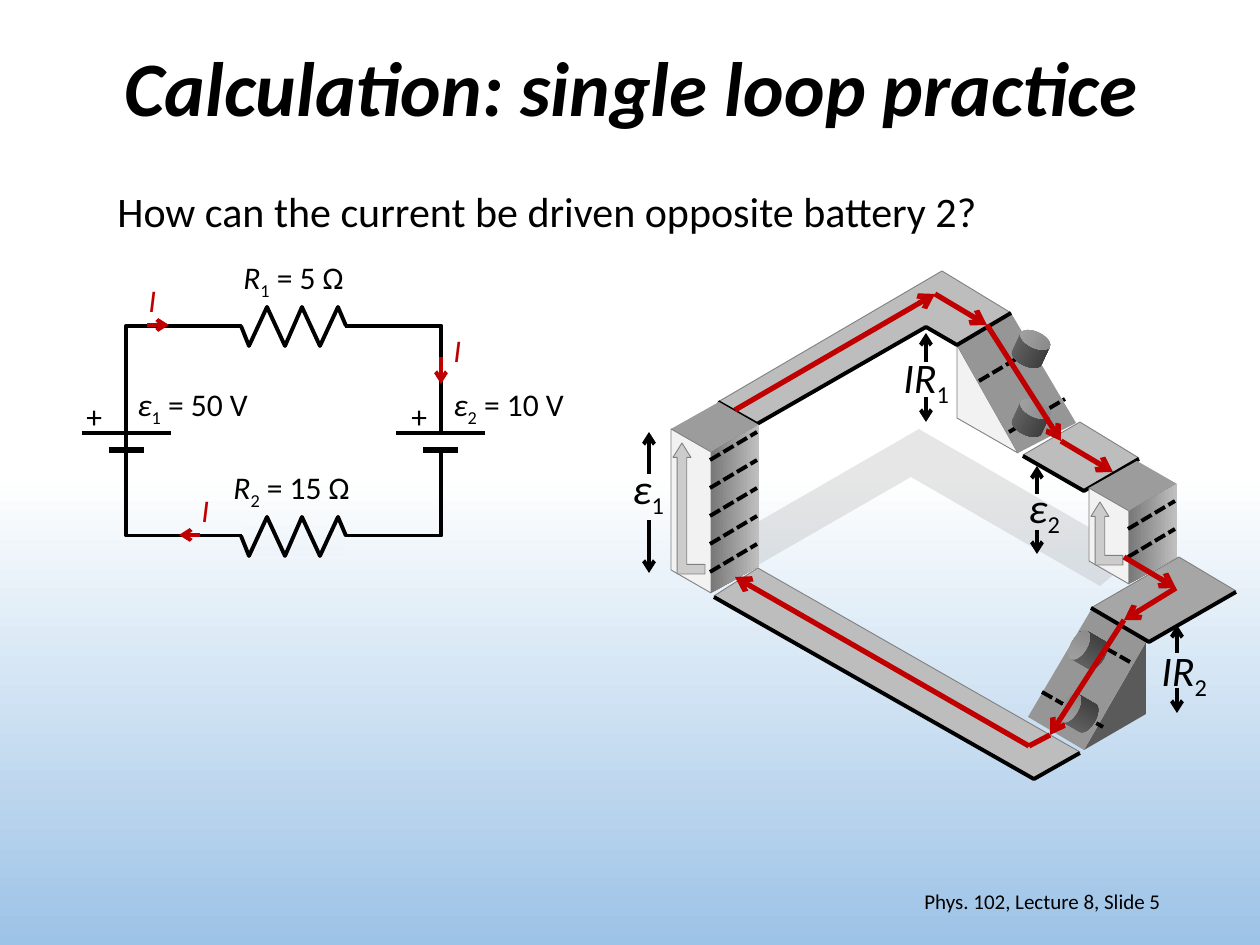
from dataclasses import dataclass

import lxml.etree
import pptx
import pptx.dml.color
import pptx.enum.dml
import pptx.enum.shapes
import pptx.enum.text
import pptx.oxml.ns
import pptx.util

EMU_PER_PX = 914400 / 126
COLORS = {
    "ink": "000000", "current": "C00000", "white": "FFFFFF", "sky": "9DC3E6",
    "haze": "F6FAFD", "haze_low": "EEF4FA", "road": "BDBDBD", "landing": "A6A6A6",
    "ramp": "969696", "lid": "9C9C9C", "wall": "F2F2F2", "shade": "5A5A5A",
    "side": "787878", "side_light": "C0C0C0", "edge": "808080", "lift": "CCCCCC",
    "peg": "707070", "peg_dark": "303030",
}
ALIGN = pptx.enum.text.PP_ALIGN
ANCHOR = pptx.enum.text.MSO_ANCHOR
PRESET = pptx.enum.shapes.MSO_SHAPE
Point = tuple[int, int]
Box = tuple[int, int, int, int]


@dataclass
class Label:
    left: int
    top: int
    width: int
    height: int
    text: str
    size: int = 18
    subscript: str = ""
    tail: str = ""
    color: str = "ink"
    italic: bool = False
    bold: bool = False
    align: ALIGN = ALIGN.LEFT
    wrap: bool = False
    spacing: float = 1.0


@dataclass
class Stroke:
    start: Point
    end: Point
    color: str = "ink"
    weight: float = 2.25
    arrow: bool = False
    dashed: bool = False


@dataclass
class Slab:
    corners: list[Point]
    fill: str
    fill_end: str = ""
    outline: str = ""


@dataclass
class Battery:
    left: int
    top: int
    height: int
    first_dash: int
    dashes: int


@dataclass
class Peg:
    left: int
    top: int
    angle: int


def px(length: float) -> pptx.util.Emu:
    return pptx.util.Emu(round(length * EMU_PER_PX))


def rgb(name: str) -> pptx.dml.color.RGBColor:
    return pptx.dml.color.RGBColor.from_string(COLORS[name])


def paint(fill, first: str, last: str = "", angle: int = 0, first_stop: float = 0) -> None:
    if not last:
        fill.solid()
        fill.fore_color.rgb = rgb(first)
        return
    fill.gradient()
    fill.gradient_angle = angle
    for stop, name, position in zip(fill.gradient_stops, (first, last), (first_stop, 1)):
        stop.color.rgb = rgb(name)
        stop.position = position


def edge(line, color: str = "", weight: float = 0.5) -> None:
    if color:
        line.color.rgb = rgb(color)
        line.width = pptx.util.Pt(weight)
    else:
        line.fill.background()


def draw_label(shapes, label: Label) -> None:
    box = shapes.add_textbox(*map(px, (label.left, label.top, label.width, label.height)))
    frame = box.text_frame
    frame.word_wrap = label.wrap
    frame.vertical_anchor = ANCHOR.MIDDLE if label.wrap else ANCHOR.TOP
    paragraph = frame.paragraphs[0]
    paragraph.alignment = label.align
    paragraph.line_spacing = label.spacing
    paragraph.font.name = "Calibri"
    paragraph.font.size = pptx.util.Pt(label.size)
    paragraph.font.color.rgb = rgb(label.color)
    paragraph.font.bold = label.bold
    for position, text in enumerate((label.text, label.subscript, label.tail)):
        if text:
            run = paragraph.add_run()
            run.text = text
            run.font.italic = label.italic and position == 0
            if position == 1:
                run._r.get_or_add_rPr().set("baseline", "-25000")


def draw_stroke(shapes, stroke: Stroke) -> None:
    line = shapes.add_connector(
        pptx.enum.shapes.MSO_CONNECTOR.STRAIGHT, *map(px, stroke.start + stroke.end))
    edge(line.line, stroke.color, stroke.weight)
    if stroke.dashed:
        line.line.dash_style = pptx.enum.dml.MSO_LINE.SQUARE_DOT
    if stroke.arrow:
        lxml.etree.SubElement(
            line.line._get_or_add_ln(), pptx.oxml.ns.qn("a:tailEnd"), type="arrow")
    lxml.etree.SubElement(line._element.spPr, pptx.oxml.ns.qn("a:effectLst"))


def add_preset(shapes, kind, box: Box):
    shape = shapes.add_shape(kind, *map(px, box))
    shape.shadow.inherit = False
    edge(shape.line)
    return shape


def outline(shapes, points: list[Point], close: bool):
    builder = shapes.build_freeform(*points[0], scale=EMU_PER_PX)
    builder.add_line_segments(points[1:], close=close)
    shape = builder.convert_to_shape()
    shape.shadow.inherit = False
    return shape


def draw_trace(shapes, points: list[Point]) -> None:
    trace = outline(shapes, points, False)
    trace.fill.background()
    edge(trace.line, "ink", 2.25)


def draw_slab(shapes, slab: Slab):
    shape = outline(shapes, slab.corners, True)
    paint(shape.fill, slab.fill, slab.fill_end)
    edge(shape.line, slab.outline)
    return shape


def draw_battery(shapes, battery: Battery) -> None:
    x, y, h = battery.left, battery.top, battery.height
    front, right, back = (x + 40, y + 23), (x + 88, y - 4), (x + 48, y - 27)
    for slab in (
        Slab([(x, y), back, right, front], "lid"),
        Slab([(x, y), front, (x + 40, y + 23 + h), (x, y + h)], "wall", outline="edge"),
        Slab([front, right, (x + 88, y - 4 + h), (x + 40, y + 23 + h)], "side", "side_light"),
    ):
        draw_slab(shapes, slab)
    lift = add_preset(shapes, PRESET.BENT_UP_ARROW, (x + 2, y + 14, 32, h - 10))
    lift._element.spPr.find(pptx.oxml.ns.qn("a:xfrm")).set("flipH", "1")
    for index, share in enumerate((0.3, 0.28, 0.45)):
        lift.adjustments[index] = share
    paint(lift.fill, "lift")
    edge(lift.line, "edge")
    for row in range(battery.dashes):
        level = battery.first_dash + 28 * row
        draw_stroke(shapes, Stroke((x + 39, level), (x + 86, level - 28), dashed=True))


def draw_peg(shapes, peg: Peg) -> None:
    can = add_preset(shapes, PRESET.CAN, (peg.left, peg.top, 32, 36))
    can.adjustments[0] = 0.5
    can.rotation = peg.angle
    paint(can.fill, "peg", "peg_dark")


def draw_circuit(shapes) -> None:
    loop = add_preset(shapes, PRESET.RECTANGLE, (179, 273, 210, 315))
    loop.rotation = 270
    loop.fill.background()
    edge(loop.line, "ink", 2.25)
    for box, colors in (((388, 432, 105, 20), ("white",)), ((242, 305, 103, 42), ("white",)),
                        ((242, 514, 103, 42), ("haze", "haze_low", 270))):
        gap = add_preset(shapes, PRESET.RECTANGLE, box)
        paint(gap.fill, *colors)
    for level in (326, 536):
        peaks = [(249 + round(17.8 * i), level + (20 if i % 2 == 0 else -19)) for i in range(6)]
        draw_trace(shapes, [(241, level), *peaks, (346, level)])
    for left in (82, 396):
        draw_stroke(shapes, Stroke((left, 433), (left + 89, 433)))
        draw_stroke(shapes, Stroke((left + 27, 450), (left + 62, 450), weight=3))
    for start, end in (((147, 325), (169, 325)), ((441, 357), (441, 384)), ((200, 535), (179, 535))):
        draw_stroke(shapes, Stroke(start, end, "current", arrow=True))


def draw_landscape(shapes) -> None:
    shadow = draw_slab(shapes, Slab(
        [(758, 522), (919, 429), (1137, 555), (1100, 586), (911, 477), (758, 565)], "landing"))
    color = shadow._element.spPr.find(".//" + pptx.oxml.ns.qn("a:srgbClr"))
    lxml.etree.SubElement(color, pptx.oxml.ns.qn("a:alpha"), val="28000")
    for slab in (
        Slab([(957, 345), (957, 418), (1018, 453)], "wall", outline="edge"),
        Slab([(957, 345), (1011, 313), (1076, 423), (1018, 453)], "ramp"),
        Slab([(1146, 642), (1146, 714), (1084, 750)], "shade"),
        Slab([(1091, 610), (1146, 642), (1084, 750), (1028, 717)], "ramp"),
        Slab([(718, 402), (942, 271), (1011, 313), (957, 345), (926, 327), (757, 424)], "road", outline="edge"),
        Slab([(1023, 455), (1080, 422), (1139, 458), (1084, 490)], "road", outline="edge"),
        Slab([(714, 596), (758, 568), (1080, 752), (1034, 779)], "road", outline="edge"),
    ):
        draw_slab(shapes, slab)
    for rim in (
        [(718, 402), (757, 424), (926, 327), (957, 345), (1011, 313)],
        [(1023, 456), (1084, 491), (1139, 459)],
        [(714, 597), (1034, 779), (1080, 753)],
    ):
        draw_trace(shapes, rim)
    for start, end in (((979, 381), (1033, 349)), ((1009, 432), (1065, 399)),
                       ((1042, 692), (1103, 727)), ((1079, 633), (1130, 662))):
        draw_stroke(shapes, Stroke(start, end, dashed=True))
    for peg in (Peg(1015, 331, 25), Peg(1015, 400, 25), Peg(1072, 632, -60), Peg(1063, 695, -60)):
        draw_peg(shapes, peg)
    for battery in (Battery(671, 429, 141, 460, 5), Battery(1089, 488, 73, 529, 2)):
        draw_battery(shapes, battery)
    for x, upper, top, lower, bottom in ((926, 362, 333, 397, 422), (649, 474, 432, 520, 573),
                                         (1037, 494, 466, 530, 554), (1177, 653, 625, 688, 713)):
        draw_stroke(shapes, Stroke((x, upper), (x, top), arrow=True))
        draw_stroke(shapes, Stroke((x, lower), (x, bottom), arrow=True))
    draw_slab(shapes, Slab([(1091, 608), (1179, 557), (1236, 591), (1149, 641)], "landing", outline="edge"))
    draw_trace(shapes, [(1091, 608), (1149, 642), (1236, 592)])
    upper_route = [(735, 410), (935, 294), (987, 325), (1061, 441), (1113, 472)]
    lower_route = [(1124, 557), (1176, 588), (1124, 620), (1050, 735)]
    for route in (upper_route, lower_route, [(1029, 746), (735, 577)]):
        for start, end in zip(route, route[1:]):
            draw_stroke(shapes, Stroke(start, end, "current", 3, arrow=True))
    draw_stroke(shapes, Stroke((1050, 735), (1029, 746), "current", 3))


LABELS = [
    Label(89, 0, 1086, 183, "Calculation: single loop practice", 44, italic=True, bold=True,
          align=ALIGN.CENTER, wrap=True, spacing=0.9),
    Label(890, 876, 283, 50, "Phys. 102, Lecture 8, Slide 5", 12, align=ALIGN.RIGHT, wrap=True),
    Label(105, 179, 893, 63, "How can the current be driven opposite battery 2?", 24),
    *(Label(x, 391, 42, 50, "+") for x in (74, 399)),
    Label(231, 252, 129, 50, "R", 18, "1", " = 5 Ω", italic=True),
    Label(221, 462, 145, 50, "R", 18, "2", " = 15 Ω", italic=True),
    Label(125, 379, 142, 50, "ε", 18, "1", " = 50 V", italic=True),
    Label(441, 379, 142, 50, "ε", 18, "2", " = 10 V", italic=True),
    *(Label(x, y, 34, 50, "I", color="current", italic=True)
      for x, y in ((136, 275), (441, 325), (189, 485))),
    Label(891, 345, 73, 63, "IR", 24, "1", italic=True),
    Label(1149, 638, 73, 63, "IR", 24, "2", italic=True),
    Label(620, 456, 59, 63, "ε", 24, "1", italic=True),
    Label(1016, 475, 59, 63, "ε", 24, "2", italic=True),
]


def main() -> None:
    deck = pptx.Presentation()
    deck.slide_width, deck.slide_height = px(1260), px(945)
    slide = deck.slides.add_slide(deck.slide_layouts[6])
    paint(slide.background.fill, "white", "sky", 270, 0.5)
    draw_circuit(slide.shapes)
    draw_landscape(slide.shapes)
    for label in LABELS:
        draw_label(slide.shapes, label)
    deck.save("out.pptx")


if __name__ == "__main__":
    main()
